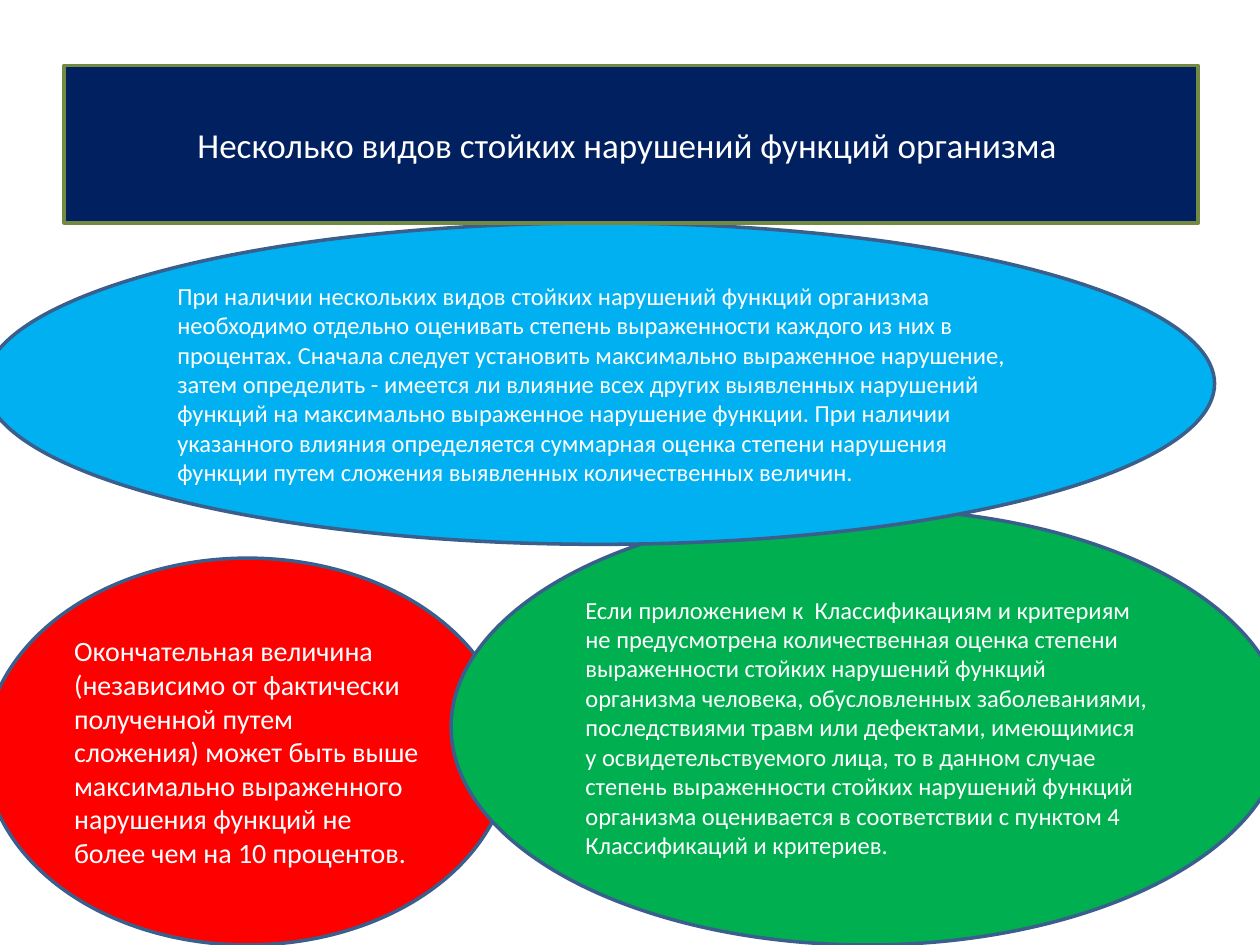
from pptx import Presentation
from pptx.dml.color import RGBColor
from pptx.enum.shapes import MSO_SHAPE
from pptx.enum.text import MSO_ANCHOR, PP_ALIGN
from pptx.util import Inches, Pt

COLORS = {
    "navy": "002060", "olive": "738A42", "outline": "3A5F8C",
    "red": "FF0000", "green": "00B050", "blue": "00B0F0", "white": "FFFFFF",
}


def format_box(sp, text, *, fill, line, size, align=PP_ALIGN.LEFT):
    sp.fill.solid()
    sp.fill.fore_color.rgb = RGBColor.from_string(COLORS[fill])
    sp.line.color.rgb = RGBColor.from_string(COLORS[line])
    sp.line.width = Pt(2)
    tf = sp.text_frame
    tf.word_wrap = True
    tf.vertical_anchor = MSO_ANCHOR.MIDDLE
    p = tf.paragraphs[0]
    p.alignment = align
    r = p.add_run()
    r.text = text
    r.font.name = "Calibri"
    r.font.size = Pt(size)
    r.font.color.rgb = RGBColor.from_string(COLORS["white"])


prs = Presentation()
prs.slide_width, prs.slide_height = Inches(10), Inches(7.5)
s = prs.slides.add_slide(prs.slide_layouts[5])

# Ellipses, from back to front
ellipses = [
    ((-0.12, 4.43, 4.17, 3.07), "red", 16,
     "Окончательная величина (независимо от фактически полученной путем "
     "сложения) может быть выше максимально выраженного нарушения функций "
     "не более чем на 10 процентов."),
    ((3.58, 4.04, 6.61, 3.46), "green", 14,
     "Если приложением к  Классификациям и критериям не предусмотрена "
     "количественная оценка степени выраженности стойких нарушений функций "
     "организма человека, обусловленных заболеваниями, последствиями травм "
     "или дефектами, имеющимися у освидетельствуемого лица, то в данном "
     "случае степень выраженности стойких нарушений функций организма "
     "оценивается в соответствии с пунктом 4  Классификаций и критериев."),
    ((-0.12, 1.77, 9.76, 2.55), "blue", 14,
     "При наличии нескольких видов стойких нарушений функций организма "
     "необходимо отдельно оценивать степень выраженности каждого из них в "
     "процентах. Сначала следует установить максимально выраженное "
     "нарушение, затем определить - имеется ли влияние всех других "
     "выявленных нарушений функций на максимально выраженное нарушение "
     "функции. При наличии указанного влияния определяется суммарная оценка "
     "степени нарушения функции путем сложения выявленных количественных "
     "величин."),
]
for box, fill, size, text in ellipses:
    sp = s.shapes.add_shape(MSO_SHAPE.OVAL, *map(Inches, box))
    sp.shadow.inherit = False
    format_box(sp, text, fill=fill, line="outline", size=size)

# Title banner, brought in front of the ellipses
title = s.shapes.title
title.left, title.top, title.width, title.height = map(Inches, (0.51, 0.52, 9, 1.25))
format_box(title, "Несколько видов стойких нарушений функций организма ",
           fill="navy", line="olive", size=20, align=PP_ALIGN.CENTER)
title.element.getparent().append(title.element)

prs.save("out.pptx")
